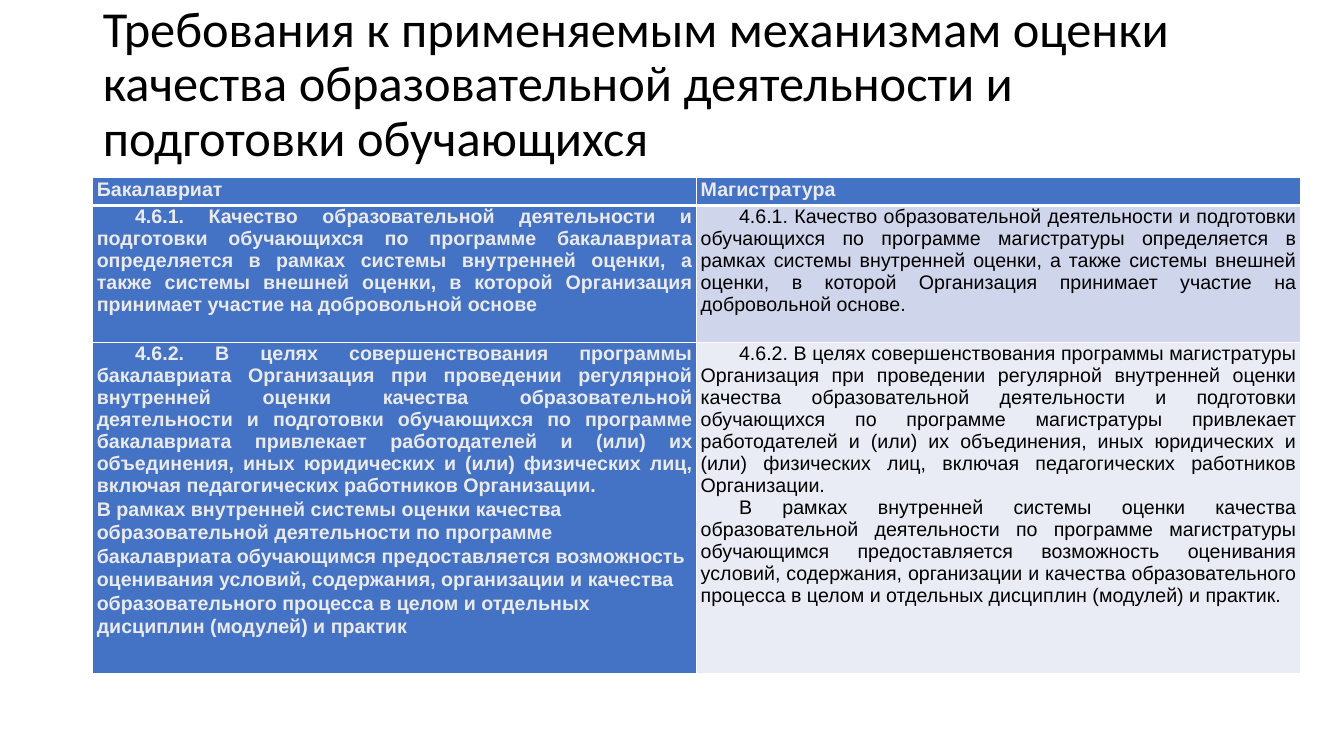
import pptx
import pptx.util
import pptx.dml.color
import pptx.enum.text
import pptx.oxml
import pptx.oxml.ns
from lxml import etree

Inches = pptx.util.Inches
Pt = pptx.util.Pt
RGB = pptx.dml.color.RGBColor.from_string
ALIGN = pptx.enum.text.PP_ALIGN
ANCHOR = pptx.enum.text.MSO_ANCHOR

# Content
HEADING = ("Требования к применяемым механизмам оценки качества "
           "образовательной деятельности и подготовки обучающихся")
PROGRAMS = ["Бакалавриат", "Магистратура"]
QUALITY = [
    ["4.6.1. Качество образовательной деятельности и подготовки обучающихся по программе "
     "бакалавриата определяется в рамках системы внутренней оценки, а также системы внешней "
     "оценки, в которой Организация принимает участие на добровольной основе"],
    ["4.6.1. Качество образовательной деятельности и подготовки обучающихся по программе "
     "магистратуры определяется в рамках системы внутренней оценки, а также системы внешней "
     "оценки, в которой Организация принимает участие на добровольной основе."],
]
IMPROVEMENT = [
    ["4.6.2. В целях совершенствования программы бакалавриата Организация при проведении "
     "регулярной внутренней оценки качества образовательной деятельности и подготовки "
     "обучающихся по программе бакалавриата привлекает работодателей и (или) их объединения, "
     "иных юридических и (или) физических лиц, включая педагогических работников Организации.",
     "В рамках внутренней системы оценки качества образовательной деятельности по программе "
     "бакалавриата обучающимся предоставляется возможность оценивания условий, содержания, "
     "организации и качества образовательного процесса в целом и отдельных дисциплин "
     "(модулей) и практик"],
    ["4.6.2. В целях совершенствования программы магистратуры Организация при проведении "
     "регулярной внутренней оценки качества образовательной деятельности и подготовки "
     "обучающихся по программе магистратуры привлекает работодателей и (или) их объединения, "
     "иных юридических и (или) физических лиц, включая педагогических работников Организации.",
     "В рамках внутренней системы оценки качества образовательной деятельности по программе "
     "магистратуры обучающимся предоставляется возможность оценивания условий, содержания, "
     "организации и качества образовательного процесса в целом и отдельных дисциплин "
     "(модулей) и практик."],
]
REQUIREMENTS = [[[name] for name in PROGRAMS], QUALITY, IMPROVEMENT]
ROW_HEIGHTS = [0.28, 1.36, 3.28]
COLUMN_WIDTH = 5.99

THEME = {
    "background": "FFFFFF", "border": "FFFFFF", "accent": "4472C4",
    "bands": ["CFD5EA", "E9EBF5"], "dark": "000000", "light": "EAEAEA",
    "title_font": "Calibri", "body_font": "Arial", "title_size": 36, "body_size": 14,
}


def write(frame, paragraphs, *, font, size, color, bold=False, spacing=1.0,
          flush=(), align=ALIGN.LEFT, indent=0):
    """Fill a frame; paragraphs numbered in flush are left-aligned, without indent."""
    frame.word_wrap = True
    for number, words in enumerate(paragraphs):
        paragraph = frame.paragraphs[0] if number == 0 else frame.add_paragraph()
        plain = number in flush
        paragraph.alignment = ALIGN.LEFT if plain else align
        paragraph.line_spacing = 1.07 if plain else spacing
        if indent and not plain:
            paragraph._p.get_or_add_pPr().set("indent", str(Inches(indent)))
        run = paragraph.add_run()
        run.text = words
        run.font.name, run.font.size, run.font.bold = font, Pt(size), bold
        run.font.color.rgb = RGB(color)


def add_borders(cell, widths):
    """Draw cell borders; widths are points for left, right, top, bottom."""
    properties = cell._tc.get_or_add_tcPr()
    for position, (side, width) in enumerate(zip("LRTB", widths)):
        line = pptx.oxml.parse_xml(
            f'<a:ln{side} xmlns:a="http://schemas.openxmlformats.org/drawingml/2006/main" '
            f'w="{Pt(width)}"><a:solidFill><a:srgbClr val="{THEME["border"]}"/>'
            f'</a:solidFill></a:ln{side}>')
        properties.insert(position, line)


def main():
    deck = pptx.Presentation()
    deck.slide_width, deck.slide_height = Inches(13.33), Inches(7.5)
    slide = deck.slides.add_slide(deck.slide_layouts[5])
    slide.background.fill.solid()
    slide.background.fill.fore_color.rgb = RGB(THEME["background"])

    # Title, lifted by a deep bottom inset
    title = slide.shapes.title
    title.left, title.top = Inches(0.92), Inches(0.4)
    title.width, title.height = Inches(11.5), Inches(1.45)
    title.text_frame.vertical_anchor = ANCHOR.MIDDLE
    title.text_frame.auto_size = pptx.enum.text.MSO_AUTO_SIZE.NONE
    title.text_frame.margin_bottom = Inches(0.6)
    write(title.text_frame, [HEADING], font=THEME["title_font"],
          size=THEME["title_size"], color=THEME["dark"], spacing=0.9)

    # Table of requirements
    table = slide.shapes.add_table(
        len(REQUIREMENTS), len(PROGRAMS), Inches(0.92), Inches(1.76),
        Inches(COLUMN_WIDTH * len(PROGRAMS)), Inches(sum(ROW_HEIGHTS))).table
    table.first_col = True
    for column in table.columns:
        column.width = Inches(COLUMN_WIDTH)
    for r, (height, requirement) in enumerate(zip(ROW_HEIGHTS, REQUIREMENTS)):
        table.rows[r].height = Inches(height)
        for c, paragraphs in enumerate(requirement):
            cell = table.cell(r, c)
            header = r == 0
            strong = header or c == 0
            cell.margin_left = cell.margin_right = Inches(0.04)
            cell.margin_top = cell.margin_bottom = 0
            cell.fill.solid()
            cell.fill.fore_color.rgb = RGB(
                THEME["accent"] if strong else THEME["bands"][r - 1])
            add_borders(cell, (1, 1, 3 if r == 1 else 1, 3 if header else 1))
            write(cell.text_frame, paragraphs, font=THEME["body_font"],
                  size=THEME["body_size"], bold=strong,
                  color=THEME["light" if strong else "dark"],
                  align=ALIGN.JUSTIFY, indent=0.38,
                  flush=(0,) if header else (1,) if c == 0 else ())

    deck.save("out.pptx")


if __name__ == "__main__":
    main()
